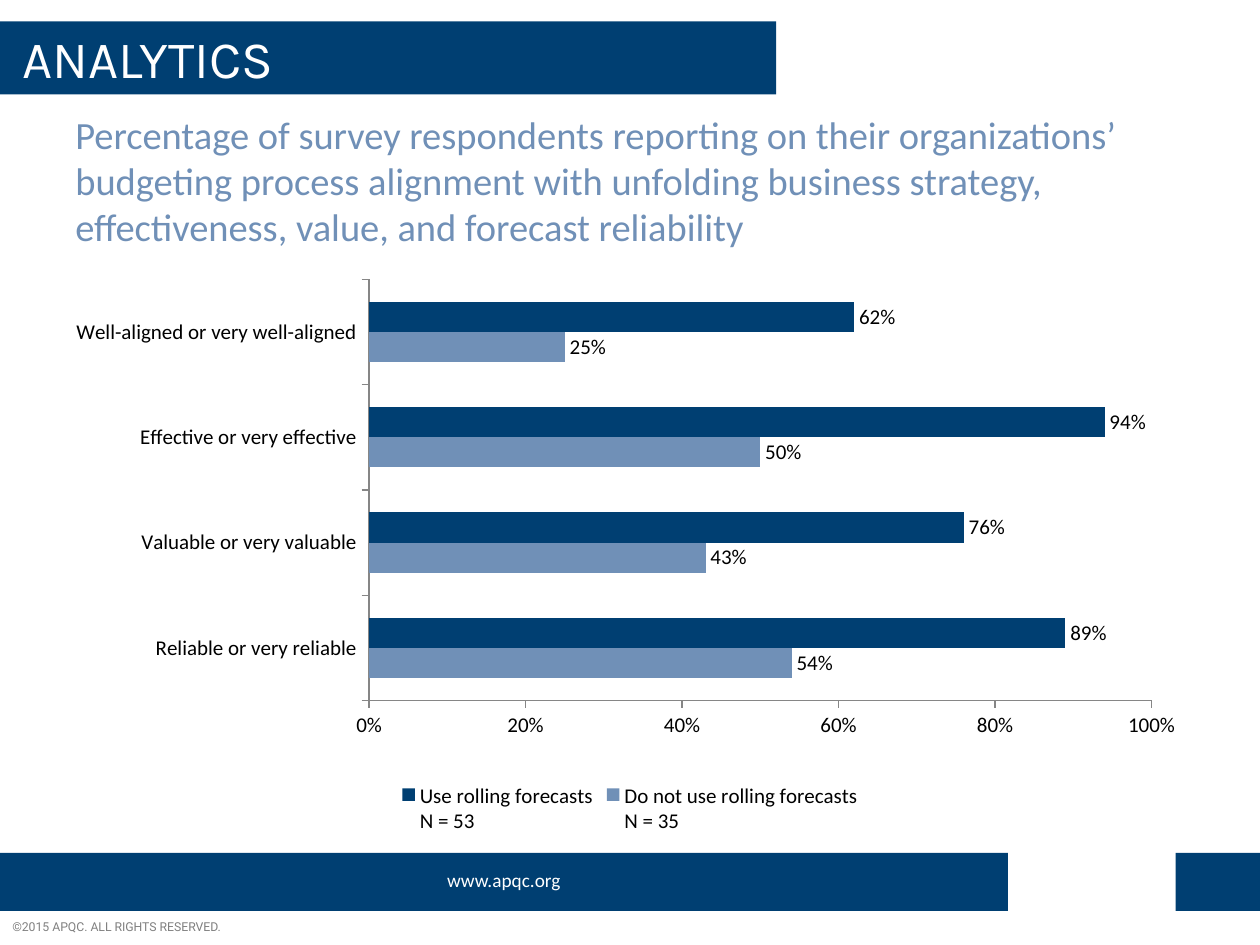
import pptx
import pptx.chart.data
import pptx.dml.color
import pptx.enum.chart
import pptx.enum.shapes
import pptx.enum.text
import pptx.oxml
import pptx.oxml.ns
import pptx.util

Inches, Pt = pptx.util.Inches, pptx.util.Pt
XL = pptx.enum.chart
ALIGN, ANCHOR = pptx.enum.text.PP_ALIGN, pptx.enum.text.MSO_ANCHOR

COLORS = {"navy": "003F72", "blue": "7090B7", "white": "FFFFFF",
          "gray": "808080", "axis": "868686", "black": "000000"}

# Content
TITLE = "ANALYTICS"
SUBTITLE = ("Percentage of survey respondents reporting on their organizations’ "
            "budgeting process alignment with unfolding business strategy, "
            "effectiveness, value, and forecast reliability")
BANDS = [(-0.01, 0.17, 6.17, 0.58), (0, 6.77, 8, 0.46), (9.33, 6.77, 0.67, 0.46)]
TEXTS = [
    ("www.apqc.org", (0, 6.84, 8, 0.29), ALIGN.CENTER,
     {"size": Pt(11), "name": "Calibri"}, "white"),
    ("©2015 APQC. ALL RIGHTS RESERVED.", (0, 7.25, 2, 0.22), ALIGN.LEFT,
     {"size": Pt(7), "name": "Roboto"}, "gray"),
    (SUBTITLE, (0.5, 0.83, 9, 0.67), ALIGN.LEFT,
     {"size": Pt(22), "name": "Calibri"}, "blue"),
]
CATEGORIES = ["Reliable or very reliable", "Valuable or very valuable",
              "Effective or very effective", "Well-aligned or very well-aligned"]
SERIES = [
    ("Do not use rolling forecasts\nN = 35", (0.54, 0.43, 0.5, 0.25), "blue"),
    ("Use rolling forecasts\nN = 53", (0.89, 0.76, 0.94, 0.62), "navy"),
]
CHART_BOX = (0.5, 2.08, 9, 4.58)
PLOT = {"x": 0.27, "y": 0.03, "w": 0.69, "h": 0.73}
CHART_FONT = {"size": Pt(12), "name": "Calibri", "bold": False}


def rgb(name):
    return pptx.dml.color.RGBColor.from_string(COLORS[name])


def box(bounds):
    return [Inches(v) for v in bounds]


def set_attrs(obj, values):
    for key, value in values.items():
        setattr(obj, key, value)


def style_font(font, values, color):
    set_attrs(font, values)
    font.color.rgb = rgb(color)


def write(tf, text, align, font, color):
    tf.word_wrap = True
    p = tf.paragraphs[0]
    p.alignment = align
    r = p.add_run()
    r.text = text
    style_font(r.font, font, color)


def add_band(slide, bounds):
    sp = slide.shapes.add_shape(pptx.enum.shapes.MSO_SHAPE.RECTANGLE, *box(bounds))
    sp.shadow.inherit = False
    sp.fill.solid()
    sp.fill.fore_color.rgb = rgb("navy")
    sp.line.fill.background()


def set_plot_layout(chart):
    area = chart._chartSpace.chart.plotArea
    for old in area.findall(pptx.oxml.ns.qn("c:layout")):
        area.remove(old)
    modes = '<c:xMode val="edge"/><c:yMode val="edge"/>'
    sizes = "".join(f'<c:{k} val="{v}"/>' for k, v in PLOT.items())
    area.insert(0, pptx.oxml.parse_xml(
        f'<c:layout {pptx.oxml.ns.nsdecls("c")}><c:manualLayout>'
        f'<c:layoutTarget val="inner"/>{modes}{sizes}</c:manualLayout></c:layout>'))


def add_bar_chart(slide):
    data = pptx.chart.data.CategoryChartData(number_format="0%")
    data.categories = CATEGORIES
    for name, values, _ in SERIES:
        data.add_series(name, values)
    chart = slide.shapes.add_chart(
        XL.XL_CHART_TYPE.BAR_CLUSTERED, *box(CHART_BOX), data).chart
    chart.has_title = False
    style_font(chart.font, {**CHART_FONT, "size": Pt(10)}, "black")

    # Bars and value labels
    plot = chart.plots[0]
    set_attrs(plot, {"gap_width": 150, "overlap": 0, "vary_by_categories": False})
    for s, (_, _, color) in zip(plot.series, SERIES):
        s.format.fill.solid()
        s.format.fill.fore_color.rgb = rgb(color)
        labels = s.data_labels
        set_attrs(labels, {"show_value": True, "number_format": "0%",
                           "number_format_is_linked": False,
                           "position": XL.XL_LABEL_POSITION.OUTSIDE_END})
        style_font(labels.font, CHART_FONT, "black")

    # Axes
    for axis in (chart.category_axis, chart.value_axis):
        set_attrs(axis, {"has_major_gridlines": False,
                         "major_tick_mark": XL.XL_TICK_MARK.OUTSIDE,
                         "minor_tick_mark": XL.XL_TICK_MARK.NONE})
        axis.format.line.color.rgb = rgb("axis")
        style_font(axis.tick_labels.font, CHART_FONT, "black")
    set_attrs(chart.value_axis, {"minimum_scale": 0, "maximum_scale": 1,
                                 "major_unit": 0.2})
    set_attrs(chart.value_axis.tick_labels, {"number_format": "0%",
                                             "number_format_is_linked": False})

    # Legend
    chart.has_legend = True
    set_attrs(chart.legend, {"position": XL.XL_LEGEND_POSITION.BOTTOM,
                             "include_in_layout": False})
    style_font(chart.legend.font, CHART_FONT, "black")
    set_plot_layout(chart)


def main():
    prs = pptx.Presentation()
    set_attrs(prs, {"slide_width": Inches(10), "slide_height": Inches(7.5)})
    slide = prs.slides.add_slide(prs.slide_layouts[5])

    # Header and footer bands
    for bounds in BANDS:
        add_band(slide, bounds)

    # Title, brought in front of its band
    title = slide.shapes.title
    set_attrs(title, dict(zip(("left", "top", "width", "height"),
                              box((0.08, 0.17, 5.83, 0.58)))))
    title.text_frame.vertical_anchor = ANCHOR.MIDDLE
    write(title.text_frame, TITLE, ALIGN.LEFT,
          {"size": Pt(30), "name": "Karla"}, "white")
    slide.shapes._spTree.append(title._element)

    # Subtitle and footer texts
    for text, bounds, align, font, color in TEXTS:
        tf = slide.shapes.add_textbox(*box(bounds)).text_frame
        write(tf, text, align, font, color)

    add_bar_chart(slide)
    prs.save("out.pptx")


if __name__ == "__main__":
    main()
